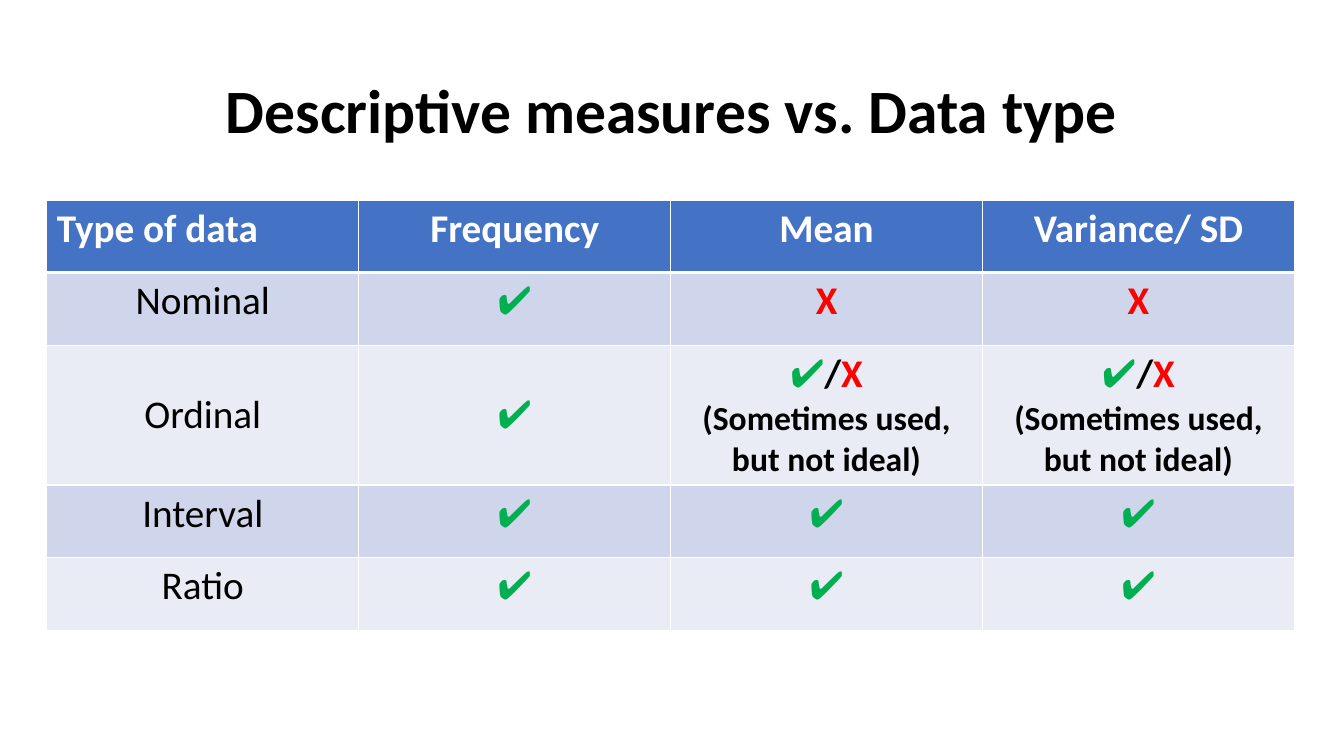
from lxml import etree
from pptx import Presentation
from pptx.dml.color import RGBColor
from pptx.enum import text as t
from pptx.oxml import ns
from pptx.util import Cm, Pt

COLORS = {
    "black": "000000", "white": "FFFFFF", "header": "4472C4",
    "band_dark": "CFD5EA", "band_light": "E9EBF5",
    "yes": "00B050", "no": "FF0000",
}
FONT = "Calibri"
SYMBOL_COLORS = {"✔": "yes", "X": "no", "/": "black"}
SOMETIMES = "✔/X"
REMARK = "(Sometimes used, but not ideal)"
HEADINGS = ["Type of data", "Frequency", "Mean", "Variance/ SD"]
MEASURES = [
    ["Nominal", "✔", "X", "X"],
    ["Ordinal", "✔", SOMETIMES, SOMETIMES],
    ["Interval", "✔", "✔", "✔"],
    ["Ratio", "✔", "✔", "✔"],
]
ROW_HEIGHTS = [1.83, 1.83, 3.52, 1.83, 1.83]


def add_text(paragraph, content, size=28, color="black", bold=True,
             align=t.PP_ALIGN.CENTER):
    paragraph.alignment = align
    run = paragraph.add_run()
    run.text = content
    run.font.name = FONT
    run.font.size = Pt(size)
    run.font.bold = bold
    run.font.color.rgb = RGBColor.from_string(COLORS[color])


def set_borders(cell, **widths):
    properties = cell._tc.get_or_add_tcPr()
    for side in "LRTB":
        line = etree.SubElement(properties, ns.qn(f"a:ln{side}"),
                                w=str(Pt(widths.get(side, 1))))
        fill = etree.SubElement(line, ns.qn("a:solidFill"))
        etree.SubElement(fill, ns.qn("a:srgbClr"), val=COLORS["white"])


def add_title(slide, left, top, width, height):
    shape = slide.shapes.add_textbox(Cm(left), Cm(top), Cm(width), Cm(height))
    frame = shape.text_frame
    frame.word_wrap = True
    frame.vertical_anchor = t.MSO_ANCHOR.MIDDLE
    paragraph = frame.paragraphs[0]
    paragraph.line_spacing = 0.9
    add_text(paragraph, "Descriptive measures vs. Data type", size=44)


def fill_cell(cell, content, row, column):
    frame = cell.text_frame
    paragraph = frame.paragraphs[0]
    if row == 0:
        align = t.PP_ALIGN.CENTER if column else t.PP_ALIGN.LEFT
        add_text(paragraph, content, color="white", align=align)
    elif column == 0:
        add_text(paragraph, content, bold=False)
    else:
        for symbol in content:
            add_text(paragraph, symbol, color=SYMBOL_COLORS[symbol])
    if content == SOMETIMES:
        add_text(frame.add_paragraph(), REMARK, size=24)


def add_measures_table(slide, left, top, width, height):
    rows = [HEADINGS] + MEASURES
    table = slide.shapes.add_table(len(rows), len(HEADINGS), Cm(left), Cm(top),
                                   Cm(width), Cm(height)).table
    for column in table.columns:
        column.width = Cm(width / len(HEADINGS))
    for row, contents in enumerate(rows):
        table.rows[row].height = Cm(ROW_HEIGHTS[row])
        band = "header" if row == 0 else "band_dark" if row % 2 else "band_light"
        for column, content in enumerate(contents):
            cell = table.cell(row, column)
            # The rule under the header is thicker
            set_borders(cell, B=3 if row == 0 else 1, T=3 if row == 1 else 1)
            cell.fill.solid()
            cell.fill.fore_color.rgb = RGBColor.from_string(COLORS[band])
            if contents[0] == "Ordinal":
                cell.vertical_anchor = t.MSO_ANCHOR.MIDDLE
            fill_cell(cell, content, row, column)


def main():
    presentation = Presentation()
    presentation.slide_width = Cm(33.87)
    presentation.slide_height = Cm(19.05)
    slide = presentation.slides.add_slide(presentation.slide_layouts[6])
    # Title
    add_title(slide, 2.33, 1.01, 29.21, 3.68)
    # Table of data types and measures
    add_measures_table(slide, 1.18, 5.04, 31.44, sum(ROW_HEIGHTS))
    presentation.save("out.pptx")


if __name__ == "__main__":
    main()
